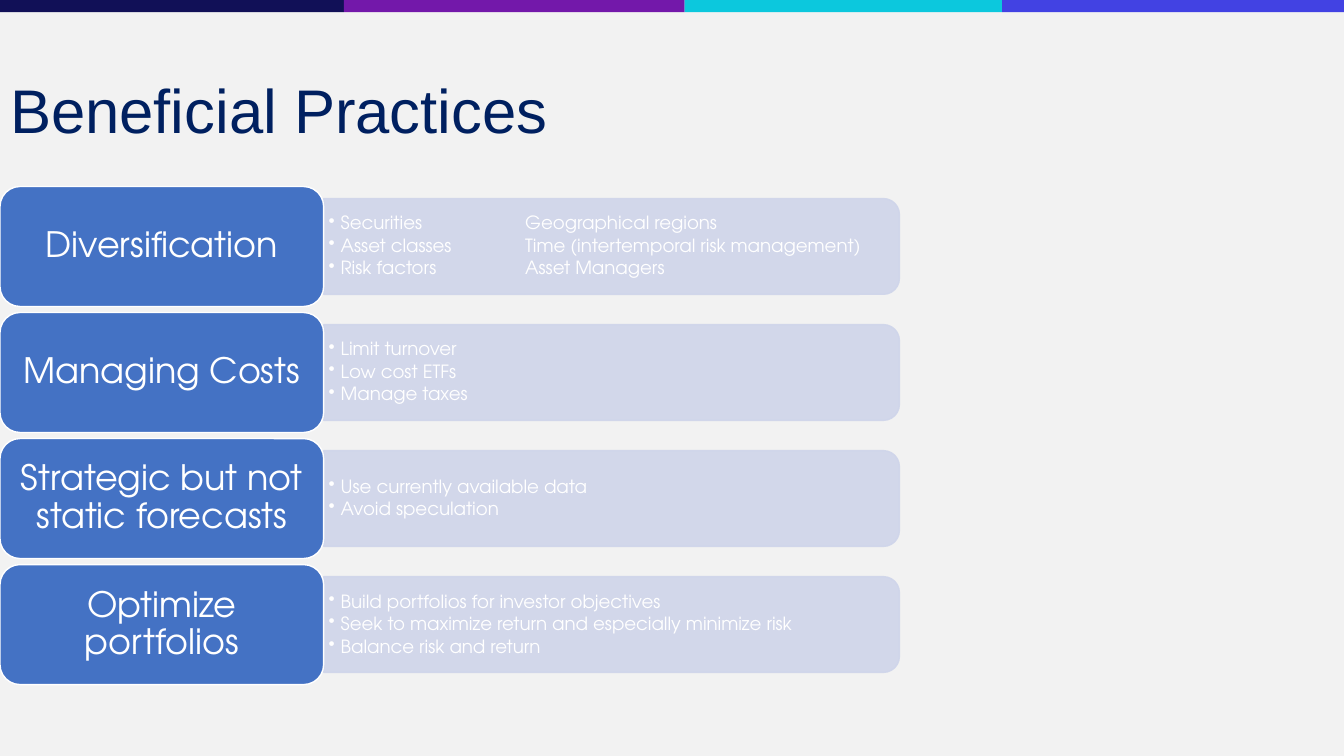
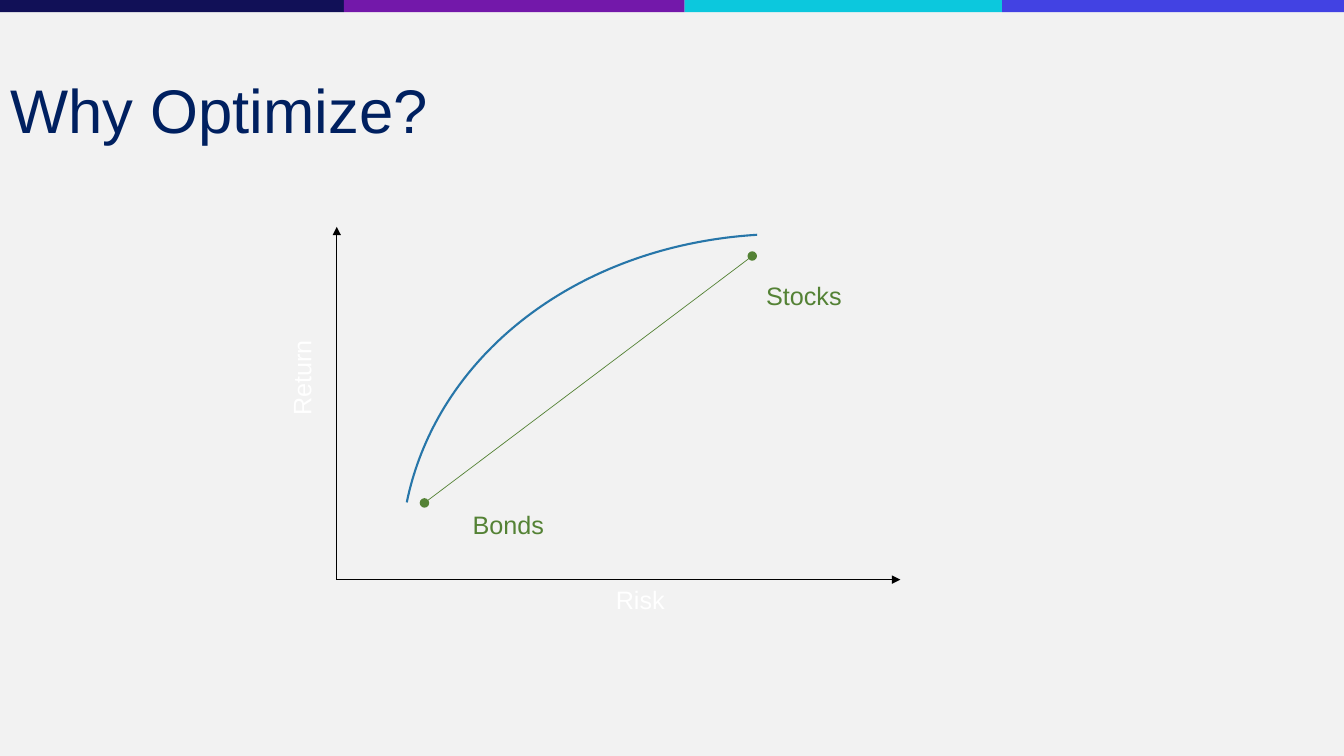
from lxml import etree
from pptx import Presentation
from pptx.dml.color import RGBColor
from pptx.enum.shapes import MSO_CONNECTOR, MSO_SHAPE
from pptx.enum.text import MSO_ANCHOR, PP_ALIGN
from pptx.oxml.ns import qn
from pptx.util import Inches, Pt

RECT, ROUND_RECT = MSO_SHAPE.RECTANGLE, MSO_SHAPE.ROUNDED_RECTANGLE
ROUND_TOP, OVAL, ARC = MSO_SHAPE.ROUND_2_SAME_RECTANGLE, MSO_SHAPE.OVAL, MSO_SHAPE.ARC
STRAIGHT = MSO_CONNECTOR.STRAIGHT
LEFT, CENTER = PP_ALIGN.LEFT, PP_ALIGN.CENTER
TOP, MIDDLE = MSO_ANCHOR.TOP, MSO_ANCHOR.MIDDLE
TITLE_ONLY = 5

GRAY, NAVY, WHITE, BLACK = "F2F2F2", "002060", "FFFFFF", "000000"
BLUE, PALE, GREEN, CURVE = "4472C4", "CFD5EA", "548235", "2776A9"
BANDS = ["111057", "7318AA", "0CC8DD", "4242E3"]
BAND_EDGES = [0, 25.58, 50.94, 74.57, 100]
HEADING, BODY = "Arial", "TeX Gyre Adventor"


def rgb(code):
    return RGBColor.from_string(code)


class Deck:
    """Style and current slide; places are percentages of the slide's width and height."""

    def __init__(self):
        self.prs = Presentation()
        self.prs.slide_width, self.prs.slide_height = Inches(13.33), Inches(7.5)
        self.layout = self.prs.slide_layouts[TITLE_ONLY]
        background = self.prs.slide_master.background.fill
        background.solid()
        background.fore_color.rgb = rgb(GRAY)
        self.slide = None

    def x(self, share):
        return round(self.prs.slide_width * share / 100)

    def y(self, share):
        return round(self.prs.slide_height * share / 100)

    def frame(self, x, y, w, h, quarter_turned=False):
        """Give the frame in EMU; a quarter-turned one covers the same area once rotated."""
        left, top, width, height = self.x(x), self.y(y), self.x(w), self.y(h)
        if quarter_turned:
            shift = (width - height) // 2
            return left + shift, top - shift, height, width
        return left, top, width, height

    def new_slide(self, title):
        first = self.slide is None
        self.slide = self.prs.slides.add_slide(self.layout)
        if first:
            self.put_bands_on_layout()
        heading = self.slide.shapes.title
        heading.left, heading.top, heading.width, heading.height = self.frame(0, 5.33, 86.25, 19.33)
        self.set_text(heading, [title], 44, NAVY, anchor=MIDDLE, spacing=0.9)

    def put_bands_on_layout(self):
        for color, start, end in zip(BANDS, BAND_EDGES, BAND_EDGES[1:]):
            band = self.shape(RECT, start, 0, end - start, 1.6, fill=color)
            self.layout.shapes.element.append(band.element)

    def shape(self, kind, x, y, w, h, fill=None, line=None, weight=1, rotation=0, opacity=100):
        shape = self.slide.shapes.add_shape(kind, *self.frame(x, y, w, h, rotation in (90, 270)))
        shape.shadow.inherit = False
        shape.rotation = rotation
        if fill:
            shape.fill.solid()
            shape.fill.fore_color.rgb = rgb(fill)
        else:
            shape.fill.background()
        if line:
            shape.line.color.rgb = rgb(line)
            shape.line.width = Pt(weight)
        else:
            shape.line.fill.background()
        if opacity < 100:
            for color in shape.element.iter(qn("a:srgbClr")):
                etree.SubElement(color, qn("a:alpha"), val=str(opacity * 1000))
        return shape

    def text(self, lines, x, y, w, h, size, color, rotation=0, **style):
        box = self.slide.shapes.add_textbox(*self.frame(x, y, w, h, rotation in (90, 270)))
        box.rotation = rotation
        self.set_text(box, lines, size, color, **style)

    def set_text(self, shape, lines, size, color, font=HEADING, align=LEFT, anchor=TOP,
                 spacing=1.0, after=0, insets=(7.2, 3.6), bullets=False):
        frame = shape.text_frame
        frame.word_wrap = True
        frame.vertical_anchor = anchor
        frame.margin_left = frame.margin_right = Pt(insets[0])
        frame.margin_top = frame.margin_bottom = Pt(insets[1])
        frame.text = "\n".join(lines)
        for paragraph in frame.paragraphs:
            paragraph.alignment = align
            paragraph.line_spacing = spacing
            paragraph.space_after = Pt(after)
            if bullets:
                self.add_bullet(paragraph)
            paragraph.font.name = font
            paragraph.font.size = Pt(size)
            paragraph.font.color.rgb = rgb(color)

    def add_bullet(self, paragraph):
        """Add a hanging bullet and the tab stop of the second column."""
        properties = paragraph._p.get_or_add_pPr()
        properties.set("marL", str(Inches(0.12)))
        properties.set("indent", str(-Inches(0.12)))
        etree.SubElement(properties, qn("a:buChar"), char="•")
        tabs = etree.SubElement(properties, qn("a:tabLst"))
        etree.SubElement(tabs, qn("a:tab"), pos=str(Inches(1.95)), algn="l")

    def line(self, start, end, color, weight, arrow=False):
        line = self.slide.shapes.add_connector(
            STRAIGHT, self.x(start[0]), self.y(start[1]), self.x(end[0]), self.y(end[1]))
        line.line.color.rgb = rgb(color)
        line.line.width = Pt(weight)
        properties = line.element.spPr
        if arrow:
            etree.SubElement(properties.find(qn("a:ln")), qn("a:tailEnd"), type="triangle")
        etree.SubElement(properties, qn("a:effectLst"))

    def practice(self, row, name, points):
        """Draw one row: a named block and its bar of bullet points."""
        width, height, bar_height, points_height = 24.08, 15.87, 12.67, 11.47
        top = 24.67 + row * 16.67
        middle = top + height / 2
        self.shape(ROUND_TOP, width, middle - bar_height / 2, 42.84, bar_height,
                   PALE, PALE, rotation=90, opacity=90)
        self.text(points, width, middle - points_height / 2, 42.46, points_height, 13, WHITE,
                  font=BODY, anchor=MIDDLE, spacing=0.9, after=2, insets=(3.6, 2.2), bullets=True)
        block = self.shape(ROUND_RECT, 0, top, width, height, BLUE, WHITE)
        self.set_text(block, [name], 25, WHITE, font=BODY, align=CENTER, anchor=MIDDLE, spacing=0.9)

    def dot(self, center):
        w, h = 0.6, 1.07
        self.shape(OVAL, center[0] - w / 2, center[1] - h / 2, w, h, GREEN, GREEN)


PRACTICES = {
    "Diversification": ["Securities\tGeographical regions",
                        "Asset classes\tTime (intertemporal risk management)",
                        "Risk factors\tAsset Managers"],
    "Managing Costs": ["Limit turnover", "Low cost ETFs", "Manage taxes"],
    "Strategic but not static forecasts": ["Use currently available data", "Avoid speculation"],
    "Optimize portfolios": ["Build portfolios for investor objectives",
                            "Seek to maximize return and especially minimize risk",
                            "Balance risk and return"],
}


def practices_slide(deck):
    deck.new_slide("Beneficial Practices")
    for row, (name, points) in enumerate(PRACTICES.items()):
        deck.practice(row, name, points)


def optimize_slide(deck):
    deck.new_slide("Why Optimize?")
    origin, risk_end, return_end = (25.06, 76.67), (66.99, 76.67), (25.06, 30)
    bonds, stocks = (31.58, 66.53), (55.97, 33.87)
    for axis_end in (risk_end, return_end):
        deck.line(origin, axis_end, BLACK, 1, arrow=True)
    deck.text(["Risk"], 43.25, 76.67, 8.78, 5.33, 18, WHITE, align=CENTER)
    deck.text(["Return"], 20.93, 42.2, 3, 15.6, 18, WHITE, rotation=270, align=CENTER)
    for asset in (bonds, stocks):
        deck.dot(asset)
    deck.line(stocks, bonds, GREEN, 0.5)
    deck.text(["Bonds"], 34.43, 66.67, 8.78, 5.33, 18, GREEN)
    deck.text(["Stocks"], 56.26, 36.4, 8.78, 5.33, 18, GREEN)
    frontier = deck.shape(ARC, 34.66, 22.4, 51.99, 110.27, line=CURVE, weight=1.5, rotation=281.6)
    frontier.adjustments[0], frontier.adjustments[1] = 162, 203.42


def main():
    deck = Deck()
    practices_slide(deck)
    optimize_slide(deck)
    deck.prs.save("out.pptx")


if __name__ == "__main__":
    main()
